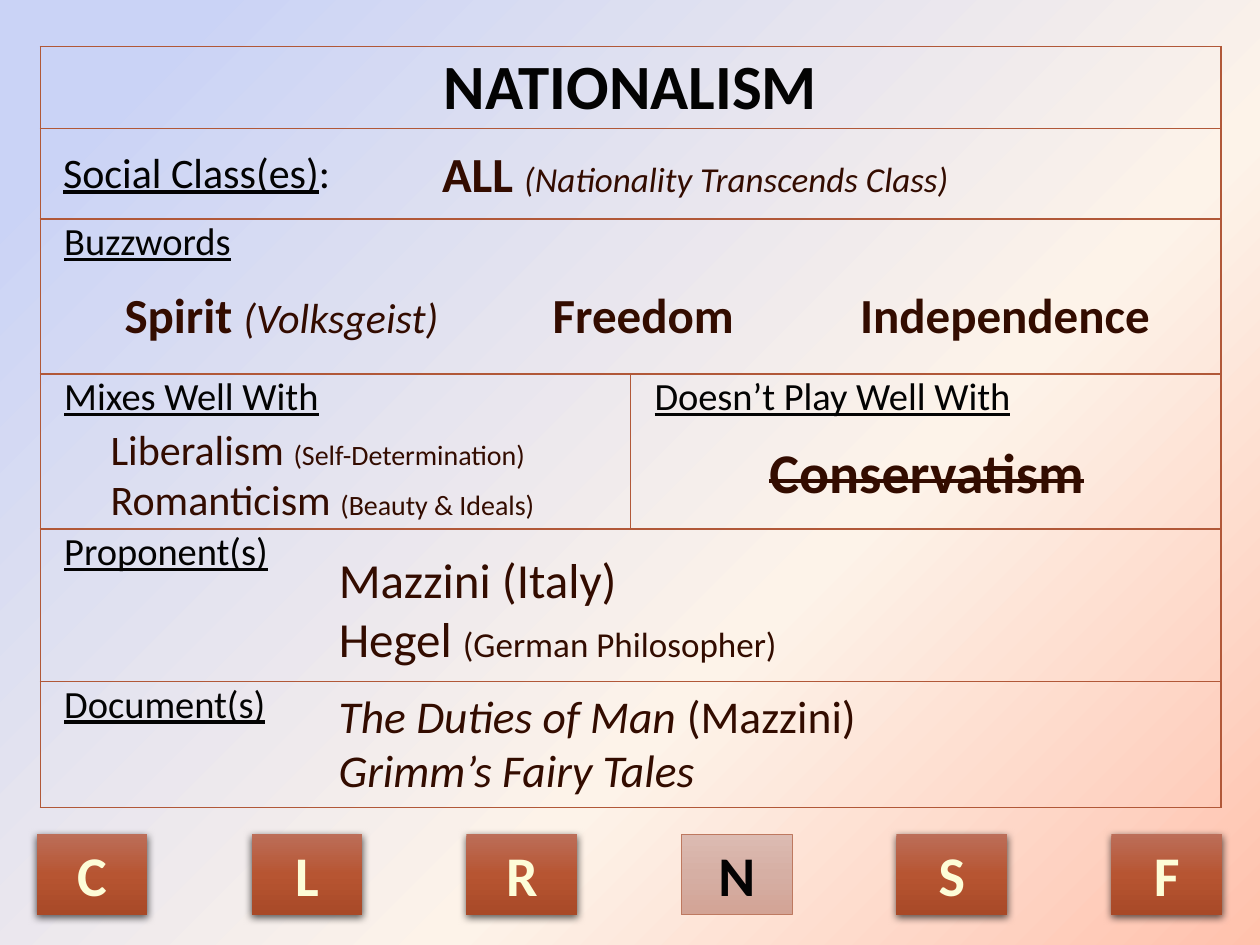
from dataclasses import dataclass
from pptx import Presentation
from pptx.dml.color import RGBColor
from pptx.enum.shapes import MSO_SHAPE
from pptx.enum.text import MSO_ANCHOR, MSO_AUTO_SIZE, PP_ALIGN
from pptx.oxml import parse_xml
from pptx.oxml.ns import nsdecls, qn
from pptx.util import Inches, Pt


@dataclass(frozen=True)
class Theme:
    font: str = "Calibri"
    ink: str = "030303"
    brown: str = "330C00"
    cream: str = "FDFDD8"
    rule: str = "B15838"
    edge: str = "BE7960"
    sky: tuple = ((9, "CAD3F6"), (63, "FDF3E9"), (100, "FFC1AD"))
    rust: tuple = ((0, "BC6E59"), (50, "B75532"), (100, "A84927"))
    pale: tuple = ((0, "DCBBB2"), (50, "D6AFA4"), (100, "D2A395"))
    title: int = 36
    big: int = 32
    main: int = 28
    work: int = 26
    mid: int = 24
    label: int = 22
    note: int = 20
    small: int = 16


T = Theme()
WIDE, HIGH = Inches(10), Inches(7.5)


# Grid of 100 columns by 100 rows
def col(n):
    return round(WIDE * n / 100)


def row(n):
    return round(HIGH * n / 100)


def area(x, y, w, h):
    return col(x), row(y), col(w), row(h)


# Text: a run is (words, size, marks), marks from b, i, u, s
def write(para, runs, color, align=PP_ALIGN.LEFT):
    para.alignment = align
    for words, size, marks in runs:
        run = para.add_run()
        run.text = words
        font = run.font
        font.name, font.size = T.font, Pt(size)
        font.color.rgb = RGBColor.from_string(color)
        font.bold, font.italic = "b" in marks, "i" in marks
        font.underline = "u" in marks
        if "s" in marks:
            run._r.get_or_add_rPr().set("strike", "sngStrike")


def shade(fill, props, stops, angle):
    fill.gradient()
    marks = "".join(
        f'<a:gs pos="{pos * 1000}"><a:srgbClr val="{color}"/></a:gs>'
        for pos, color in stops)
    new = parse_xml(
        f'<a:gradFill {nsdecls("a")} rotWithShape="1"><a:gsLst>{marks}</a:gsLst>'
        f'<a:lin ang="{angle * 60000}" scaled="0"/></a:gradFill>')
    old = props.find(qn("a:gradFill"))
    props.replace(old, new)


# Table parts
def frame(cell):
    cell.fill.background()
    props = cell._tc.get_or_add_tcPr()
    for i, side in enumerate("LRTB"):
        props.insert(i, parse_xml(
            f'<a:ln{side} {nsdecls("a")} w="{Pt(1)}"><a:solidFill>'
            f'<a:srgbClr val="{T.rule}"/></a:solidFill></a:ln{side}>'))


def label(cell, runs, indent=0.13, before=3):
    para = cell.text_frame.paragraphs[0]
    para.space_before = Pt(before)
    para._p.get_or_add_pPr().set("marL", str(Inches(indent)))
    write(para, runs, T.ink)


def chart(slide):
    rows = (8.67, 9.6, 16.4, 16.4, 16.13, 13.33)
    table = slide.shapes.add_table(
        len(rows), 2, *area(3.2, 4.93, 93.7, sum(rows))).table
    table.first_row = table.horz_banding = False
    for line, size in zip(table.rows, rows):
        line.height = row(size)
    for cell in table.iter_cells():
        frame(cell)
        cell.margin_left = cell.margin_right = Inches(0.06)
        cell.margin_top = cell.margin_bottom = 0
    for r in (0, 1, 2, 4, 5):
        table.cell(r, 0).merge(table.cell(r, 1))

    head, group = table.cell(0, 0), table.cell(1, 0)
    head.vertical_anchor = group.vertical_anchor = MSO_ANCHOR.MIDDLE
    write(head.text_frame.paragraphs[0], [("NATIONALISM", T.title, "b")],
          T.ink, PP_ALIGN.CENTER)
    label(group, [("Social Class(es)", T.mid, "u"), (":", T.mid, "")], 0.12, 0)
    for r, c, words in ((2, 0, "Buzzwords"), (3, 0, "Mixes Well With"),
                        (3, 1, "Doesn’t Play Well With"),
                        (4, 0, "Proponent(s)"), (5, 0, "Document(s)")):
        label(table.cell(r, c), [(words, T.label, "u")])


# Answers laid over the table
def answer(slide, place, paras, align=PP_ALIGN.LEFT, wrap=True):
    frame = slide.shapes.add_textbox(*area(*place)).text_frame
    frame.word_wrap = wrap
    frame.auto_size = MSO_AUTO_SIZE.SHAPE_TO_FIT_TEXT
    for i, runs in enumerate(paras):
        para = frame.add_paragraph() if i else frame.paragraphs[0]
        write(para, runs, T.brown, align)
    return frame


def answers(slide):
    group = answer(slide, (33.2, 14.53, 45.7, 7.6), [
        [("ALL ", T.main, "b"), ("(Nationality Transcends Class)", T.note, "i")],
    ], wrap=False)
    group.paragraphs[0]._p.get_or_add_pPr().set("marL", str(Inches(0.09)))
    answer(slide, (7.8, 44.13, 42.4, 12.13), [
        [("Liberalism ", T.mid, ""), ("(Self-Determination)", T.small, "")],
        [("Romanticism ", T.mid, ""), ("(Beauty & Ideals)", T.small, "")]])
    answer(slide, (50, 45.6, 47.1, 8.53),
           [[("Conservatism", T.big, "bs")]], PP_ALIGN.CENTER)
    answer(slide, (25.9, 57.47, 56.8, 13.87), [
        [("Mazzini (Italy)", T.main, "")],
        [("Hegel ", T.main, ""), ("(German Philosopher)", T.note, "")]])
    answer(slide, (25.9, 72.13, 59.6, 13.07), [
        [("The Duties of Man ", T.work, "i"), ("(Mazzini)", T.work, "")],
        [("Grimm’s Fairy Tales", T.work, "i")]])
    buzz = answer(slide, (7, 29.47, 88.1, 7.6), [
        [("Spirit ", T.main, "b"), ("(Volksgeist)", T.mid, "i")],
        [("Freedom", T.main, "b")],
        [("Independence", T.main, "b")]], PP_ALIGN.CENTER)
    buzz._txBody.bodyPr.set("numCol", "3")


# Row of letter buttons
def button(slide, x, letter, active):
    shape = slide.shapes.add_shape(
        MSO_SHAPE.RECTANGLE, *area(x, 88.27, 8.8, 8.53))
    props = shape._element.spPr
    shade(shape.fill, props, T.pale if active else T.rust, 90)
    shape.shadow.inherit = False
    if active:
        shape.line.color.rgb = RGBColor.from_string(T.edge)
        shape.line.width = Pt(0.5)
    else:
        shape.line.fill.background()
        props.find(qn("a:effectLst")).append(parse_xml(
            f'<a:outerShdw {nsdecls("a")} blurRad="{Pt(4.5)}" dist="{Pt(1.5)}" '
            'dir="5400000" rotWithShape="0"><a:srgbClr val="000000">'
            '<a:alpha val="63000"/></a:srgbClr></a:outerShdw>'))
    text = shape.text_frame
    text.word_wrap = True
    text.auto_size = MSO_AUTO_SIZE.SHAPE_TO_FIT_TEXT
    write(text.paragraphs[0], [(letter, T.big, "b")],
          T.ink if active else T.cream, PP_ALIGN.CENTER)


def buttons(slide, letters, active):
    first, last = 2.9, 88.2
    step = (last - first) / (len(letters) - 1)
    for i, letter in enumerate(letters):
        button(slide, first + i * step, letter, letter == active)


def main():
    deck = Presentation()
    deck.slide_width, deck.slide_height = WIDE, HIGH
    slide = deck.slides.add_slide(deck.slide_layouts[6])
    fill = slide.background.fill
    shade(fill, slide._element.cSld.bg.bgPr, T.sky, 45)
    chart(slide)
    answers(slide)
    buttons(slide, "CLRNSF", "N")
    deck.save("out.pptx")


if __name__ == "__main__":
    main()
